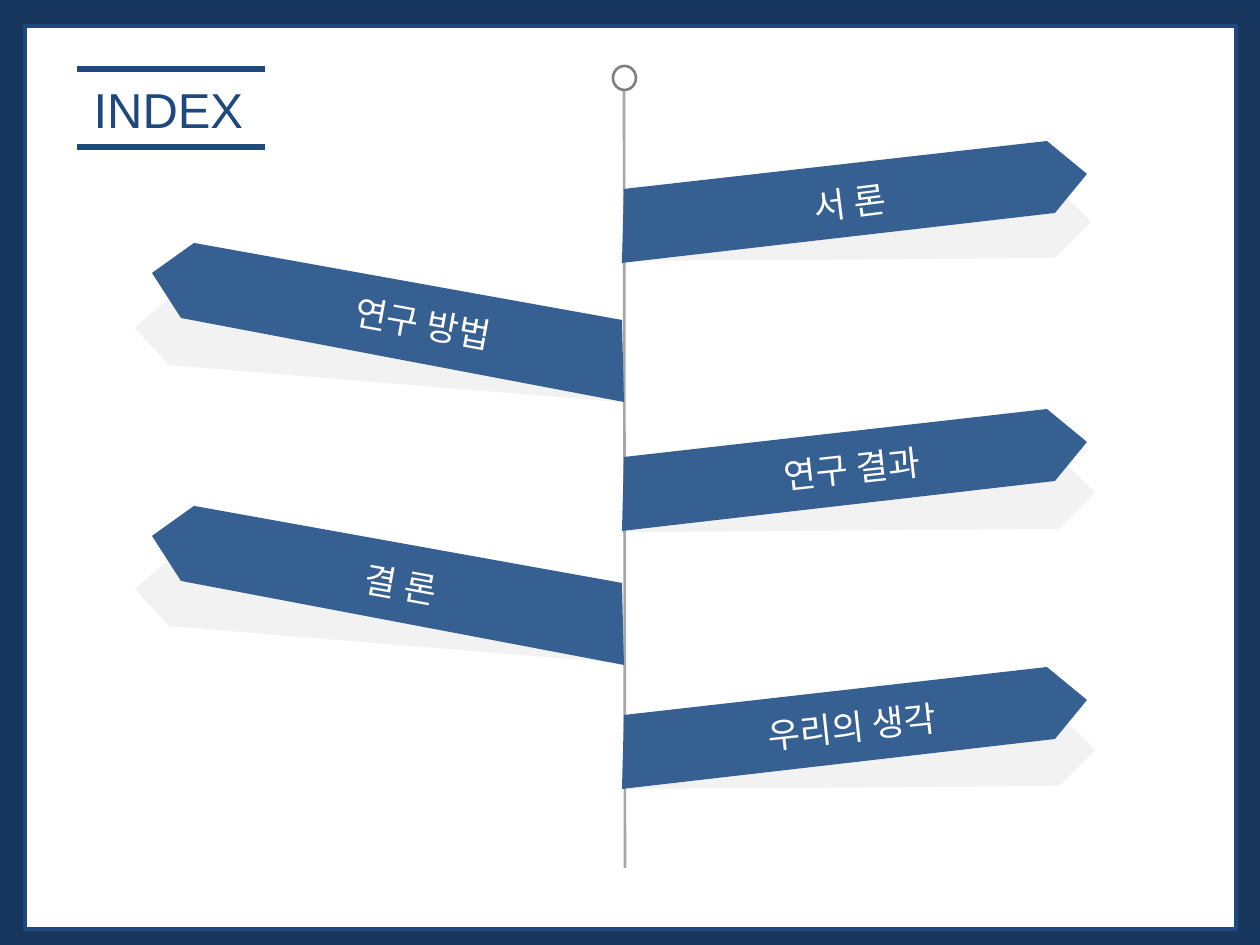
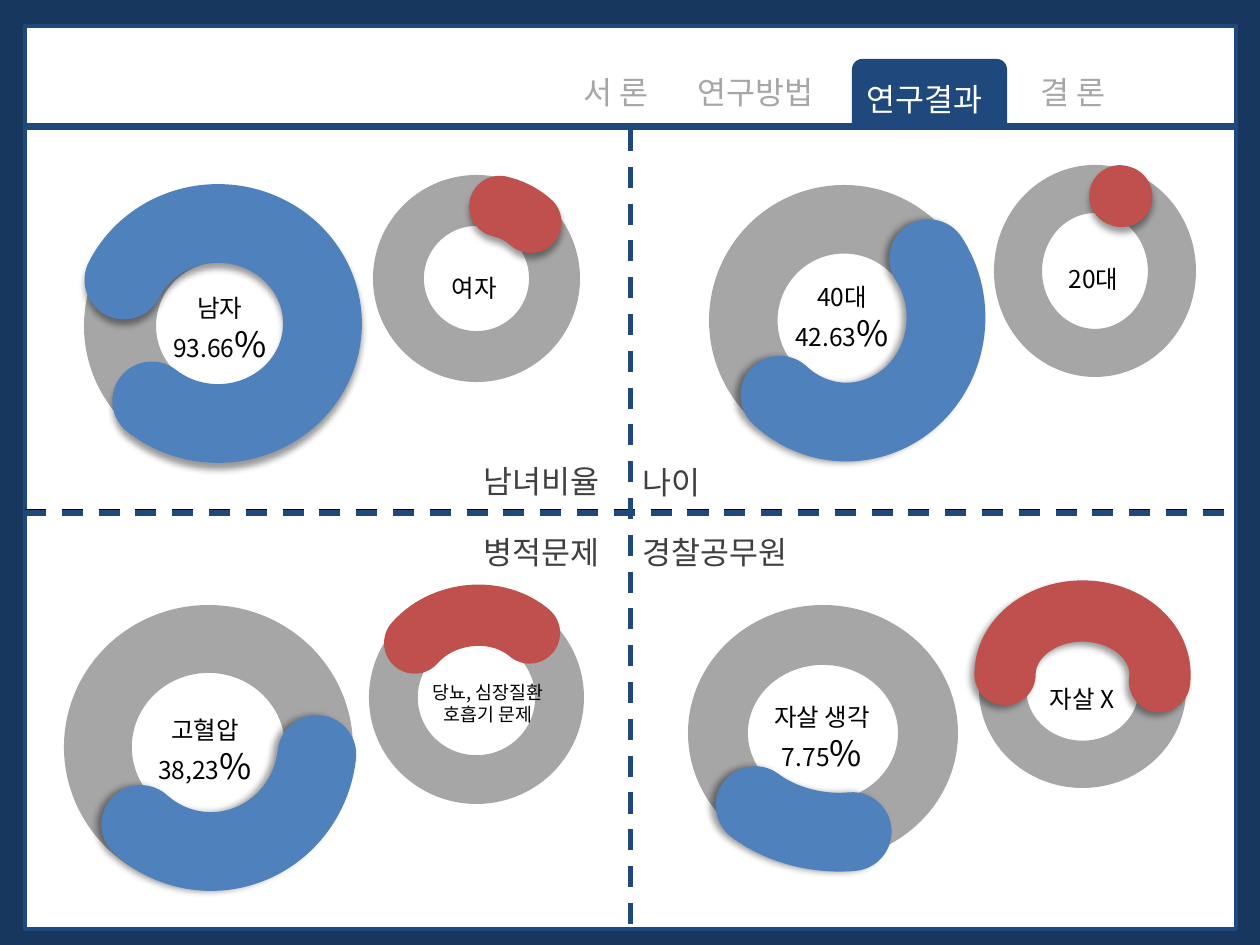
from math import cos, radians, sin
from lxml import etree
from pptx import Presentation, util as u
from pptx.dml.color import RGBColor
from pptx.enum import dml, shapes, text
from pptx.oxml.ns import qn

# Shared look
S = 914400 / 126  # EMU per px
NAVY, BLUE, BOARD = "17375E", "1F497D", "376092"
WHITE, BLACK, GREY, PALE = "FFFFFF", "000000", "A6A6A6", "F2F2F2"
ARIAL, NOTO = "Arial", "Noto Sans CJK KR"
PANEL = (25, 26, 1211, 903)
KIND = shapes.MSO_SHAPE
LEFT, MID = text.PP_ALIGN.LEFT, text.PP_ALIGN.CENTER

# Signpost: outlines of the right and left signs, with their tilt
SIGNS = {
    "right": dict(
        board=[(624, 189), (1047, 141), (1087, 174), (1055, 213), (622, 263)],
        shade=[(629, 186), (1055, 186), (1091, 222), (1055, 258), (620, 261)],
        tilt=-6.3),
    "left": dict(
        board=[(624, 402), (181, 318), (152, 273), (194, 243), (622, 320)],
        shade=[(619, 402), (169, 365), (135, 328), (174, 294), (609, 324)],
        tilt=10.4),
}
# side, board drop, shade shift, words, own text box (or None), its tilt
STOPS = [
    ("right", 0, (0, 0), "서 론", (797, 175, 105, 55), -7.2),
    ("left", 0, (0, 0), "연구 방법", (316, 296, 214, 55), 10.3),
    ("right", 268, (4, 271), "연구 결과", None, 0),
    ("left", 263, (0, 261), "결 론", (275, 557, 252, 55), 10.3),
    ("right", 526, (4, 528), "우리의 생각", None, 0),
]

# Results: tabs, captions and the four pairs of rings
TABS = [("서 론", 571, 97), ("연구방법", 685, 152), ("결 론", 1028, 97)]
NOW = ("연구결과", (854, 74, 152, 50))
NOTES = [("남녀비율", 471, 456, 159), ("나이", 630, 457, 159),
         ("병적문제", 471, 527, 159), ("경찰공무원", 630, 527, 189)]
BIG, SMALL = ("4F81BD", 45), ("C0504D", 35)  # arc colour and width


def share(name, value):
    return [[(name, 14)], [(value, 14), ("%", 20)]]


# ring box, hole, arc box, arc turn, arc ends, shadow angle, text box, lines
PAIRS = [
    [((709, 185, 270, 271), .254, (742, 218, 209, 199), 270, (32.67, 132.34),
      180, (774, 276, 136, 84), share("40대", "42.63")),
     ((994, 165, 202, 212), .238, (1032, 188, 131, 141), 260.5, (17.51, 18.51),
      90, (1053, 258, 81, 43), [[("20대", 14)]])],
    [((84, 190, 273, 272), .265, (118, 219, 200, 209), 270, (176.91, 132.34),
      90, (154, 287, 132, 84), share("남자", "93.66")),
     ((373, 175, 207, 207), .246, (415, 195, 126, 145), 260.5, (17.51, 35.38),
      90, (433, 267, 83, 43), [[("여자", 14)]])],
    [((64, 605, 289, 284), .239, (102, 636, 218, 213), 270, (57.87, 132.34),
      180, (139, 709, 132, 84), share("고혈압", "38,23")),
     ((369, 591, 215, 213), .229, (410, 604, 129, 152), 260.5, (186.75, 35.38),
      None, (173, 675, 630, 59),
      [[("당뇨, 심장질환", 10.5)], [("호흡기 문제", 10.5)]])],
    [((688, 605, 270, 256), .234, (761, 672, 123, 194), 281, (86.15, 138.32),
      180, (756, 696, 132, 84), share("자살 생각", "7.75")),
     ((979, 591, 207, 197), .24, (1019, 597, 127, 155), 270, (161.98, 57.2),
      135, (997, 678, 170, 43), [[("자살 X", 14)]])],
]


# Helpers
def px(*nums):
    return [u.Emu(round(n * S)) for n in nums]


def rgb(code):
    return RGBColor.from_string(code)


def paint(shp, fill=None, line=None, width=1):
    shp.shadow.inherit = False
    if fill:
        shp.fill.solid()
        shp.fill.fore_color.rgb = rgb(fill)
    else:
        shp.fill.background()
    if line:
        shp.line.color.rgb = rgb(line)
        shp.line.width = u.Pt(width)
    else:
        shp.line.fill.background()
    return shp


def add(home, kind, box, *look):
    return paint(home.add_shape(kind, *px(*box)), *look)


def write(frame, lines, font, hue, align):
    """Fill a frame; each line is a list of (words, size) runs."""
    for i, line in enumerate(lines):
        par = frame.paragraphs[0] if i == 0 else frame.add_paragraph()
        par.alignment = align
        for words, size in line:
            run = par.add_run()
            run.text = words
            run.font.size = u.Pt(size)
            run.font.color.rgb = rgb(hue)
            run.font.name = font
            east = etree.SubElement(run.font._element, qn("a:ea"))
            east.set("typeface", NOTO)


def label(home, box, lines, font, hue, align=LEFT, wrap=True, tilt=0):
    shp = home.add_textbox(*px(*box))
    shp.rotation = tilt
    shp.text_frame.word_wrap = wrap
    shp.text_frame.auto_size = text.MSO_AUTO_SIZE.SHAPE_TO_FIT_TEXT
    write(shp.text_frame, lines, font, hue, align)


def rule(home, ends, hue, width, dash=False):
    con = home.add_connector(shapes.MSO_CONNECTOR.STRAIGHT, *px(*ends))
    con.line.color.rgb = rgb(hue)
    con.line.width = u.Pt(width)
    if dash:
        con.line.dash_style = dml.MSO_LINE.DASH
    etree.SubElement(con.element.spPr, qn("a:effectLst"))
    return con


def head(slide, box, words, size, font, hue):
    """Bring the title to the front and format it."""
    top = slide.shapes.title
    slide.shapes.element.append(top.element)
    top.left, top.top, top.width, top.height = px(*box)
    frame = top.text_frame
    frame.word_wrap = False
    frame.auto_size = text.MSO_AUTO_SIZE.SHAPE_TO_FIT_TEXT
    frame.vertical_anchor = text.MSO_ANCHOR.TOP
    write(frame, [[(words, size)]], font, hue, LEFT)


def page(prs):
    slide = prs.slides.add_slide(prs.slide_layouts[5])
    return slide, add(slide.shapes, KIND.RECTANGLE, PANEL, WHITE, BLUE, 2)


def turn(x, y, deg):
    a = radians(deg)
    return x * cos(a) - y * sin(a), x * sin(a) + y * cos(a)


def plate(home, pts, fill, tilt=0):
    """Draw an outline as a level shape, then tilt it into place."""
    flat = [turn(x, y, -tilt) for x, y in pts]
    mx, my = [(min(c) + max(c)) / 2 for c in zip(*flat)]
    cx, cy = turn(mx, my, tilt)
    flat = [px(x + cx - mx, y + cy - my) for x, y in flat]
    pen = home.build_freeform(*flat[0])
    pen.add_line_segments(flat[1:], close=True)
    shp = paint(pen.convert_to_shape(), fill)
    shp.rotation = tilt
    return shp


def shift(pts, dx, dy):
    return [(x + dx, y + dy) for x, y in pts]


def ring(home, look, box, hole, bow, spin, ends, cast, spot, lines):
    add(home, KIND.DONUT, box, GREY).adjustments[0] = hole
    arc = add(home, KIND.ARC, bow, None, *look)
    arc.rotation = spin
    for i, end in enumerate(ends):
        arc.adjustments[i] = end  # 0.6 to the degree
    props = arc.element.spPr
    props.find(qn("a:ln")).set("cap", "rnd")
    if cast is not None:
        drop = etree.SubElement(
            props.find(qn("a:effectLst")), qn("a:outerShdw"),
            blurRad=str(u.Pt(4)), dist=str(u.Pt(3)), dir=str(cast * 60000),
            algn="ctr", rotWithShape="0")
        tone = etree.SubElement(drop, qn("a:srgbClr"), val=BLACK)
        etree.SubElement(tone, qn("a:alpha"), val="40000")
    label(home, spot, lines, NOTO, BLACK, MID)


# Slides
def index(prs):
    slide, _ = page(prs)
    home = slide.shapes
    for side, _, move, *_ in STOPS:
        plate(home, shift(SIGNS[side]["shade"], *move), PALE)
    rule(home, (624, 87, 625, 868), GREY, 1.5)
    add(home, KIND.OVAL, (613, 66, 23, 24), WHITE, "808080", 1.5)
    for side, drop, _, words, box, tilt in STOPS:
        sign = SIGNS[side]
        shp = plate(home, shift(sign["board"], 0, drop), BOARD, sign["tilt"])
        lines = [[(words, 20)]]
        if box:
            label(home, box, lines, ARIAL, WHITE, MID, tilt=tilt)
        else:
            shp.text_frame.vertical_anchor = text.MSO_ANCHOR.MIDDLE
            write(shp.text_frame, lines, ARIAL, WHITE, MID)
    head(slide, (81, 73, 179, 72), "INDEX", 28, ARIAL, BLUE)
    for y in (69, 147):
        rule(home, (77, y, 265, y), BLUE, 3)


def results(prs):
    slide, panel = page(prs)
    home = slide.shapes
    for pair in PAIRS:
        group = home.add_group_shape().shapes
        for look, part in zip((BIG, SMALL), pair):
            ring(group, look, *part)

    # Tab strip
    bar = add(home, KIND.RECTANGLE, (25, 123, 1211, 7), BLUE)
    tab = add(home, KIND.ROUND_2_SAME_RECTANGLE, (852, 59, 155, 65), BLUE)
    tab.adjustments[0] = .16
    for words, x, wide in TABS:
        label(home, (x, 67, wide, 50), [[(words, 18)]], NOTO, GREY, wrap=False)
    head(slide, NOW[1], NOW[0], 18, NOTO, WHITE)

    # Quarter lines and captions
    for y, hue in ((512, BLACK), (513, BLUE)):
        rule(home, (25, y, 1235, y), hue, 3, True)
    post = rule(home, (630, 130, 630, 929), BLUE, 3, True)
    post.begin_connect(bar, 2)
    post.end_connect(panel, 2)
    for words, x, y, wide in NOTES:
        label(home, (x, y, wide, 50), [[(words, 18)]], ARIAL, "404040")


def main():
    prs = Presentation()
    prs.slide_width, prs.slide_height = px(1260, 945)
    back = prs.slide_master.background.fill
    back.solid()
    back.fore_color.rgb = rgb(NAVY)
    index(prs)
    results(prs)
    prs.save("out.pptx")


if __name__ == "__main__":
    main()
